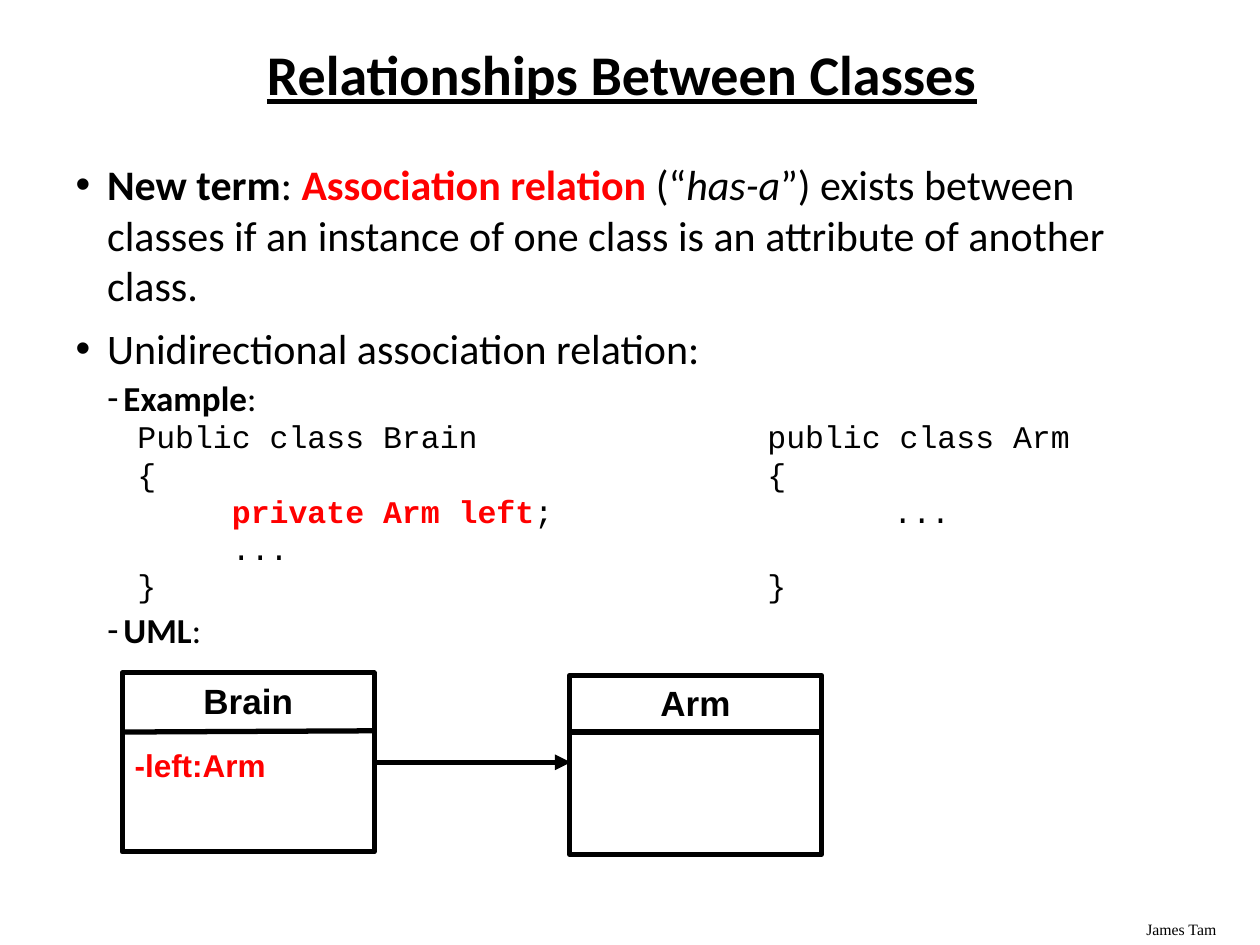
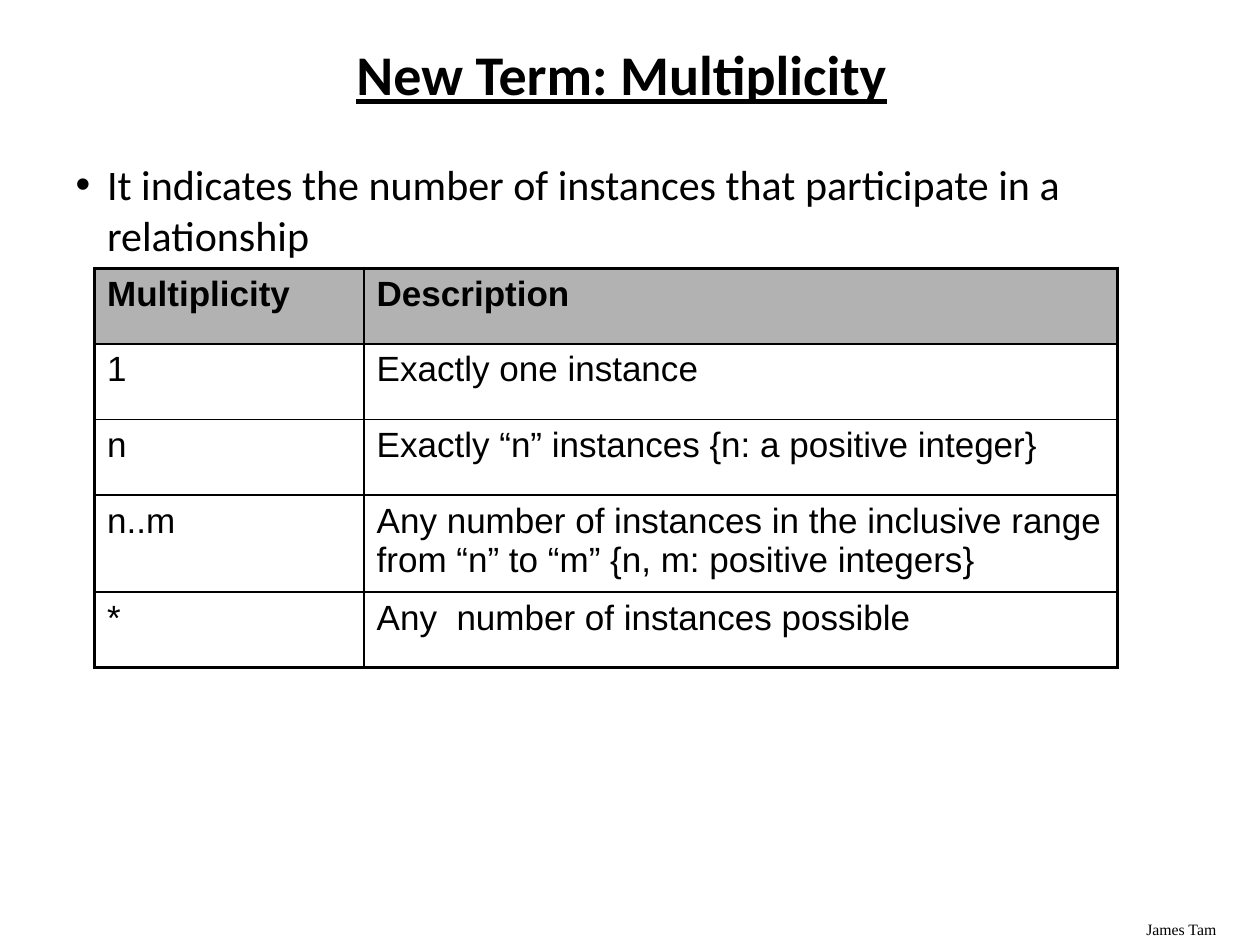
from lxml.etree import SubElement
from pptx import Presentation
from pptx.dml.color import RGBColor
from pptx.enum.shapes import MSO_CONNECTOR, MSO_SHAPE
from pptx.enum.text import MSO_ANCHOR, MSO_AUTO_SIZE, PP_ALIGN
from pptx.oxml.ns import qn
from pptx.util import Inches, Pt

BLACK = RGBColor(0x00, 0x00, 0x00)
RED = RGBColor(0xFF, 0x00, 0x00)
GRAY = RGBColor(0xB2, 0xB2, 0xB2)

FOOTER = "James Tam"
TITLE_BOX = (0.47, 0.33, 8.93, 0.57)
BODY_BOX = (0.5, 1.21, 8.94, 5.87)

BOLD = {"bold": True}
RED_BOLD = {"bold": True, "color": RED}

LEVELS = {
    "point": dict(level=0, margin=0.25, indent=-0.25, bullet="•", size=24, font="Calibri", before=7.2, spacing=1.0),
    "detail": dict(level=1, margin=0.38, indent=-0.13, bullet="-", size=20, font="Calibri", before=2, spacing=1.0),
    "code": dict(level=2, margin=0.49, indent=0, bullet=None, size=18, font="Courier New", before=1.8, spacing=0.9),
}
LEVELS["statement"] = {**LEVELS["code"], "indent": 0.75}

ASSOCIATION_TITLE = "Relationships Between Classes"
ASSOCIATION_BODY = [
    ("point", [
        ("New term", BOLD), (": ", {}), ("Association relation ", RED_BOLD),
        ("(“", {}), ("has-a", {"italic": True}),
        ("”) exists between classes if an instance of one class is an attribute of another class.", {}),
    ]),
    ("point", [("Unidirectional association relation:", {})]),
    ("detail", [("Example", BOLD), (":", {})]),
    ("code", [("Public class Brain\t\t\tpublic class Arm", {})]),
    ("code", [("{\t\t\t\t\t{", {})]),
    ("statement", [("private Arm left", RED_BOLD), (";\t\t\t...", {})]),
    ("statement", [("...", {})]),
    ("code", [("}\t\t\t\t\t}", {})]),
    ("detail", [("UML", BOLD), (":", {})]),
]
CLASS_SIZE = (2, 1.42)
CLASSES = [("Brain", 0.97, 5.34), ("Arm", 4.52, 5.36)]
DIVIDERS = [((0.97, 5.81), (2.96, 5.8)), ((4.52, 5.81), (6.5, 5.81))]
ASSOCIATION_ARROW = ((2.96, 6.05), (4.53, 6.05))
ATTRIBUTE = "-left:Arm"
ATTRIBUTE_BOX = (0.97, 5.87, 1.64, 0.4)

MULTIPLICITY_TITLE = "New Term: Multiplicity"
MULTIPLICITY_BODY = [
    ("point", [("It indicates the number of instances that participate in a relationship", {})]),
]
MULTIPLICITIES = [
    ("Multiplicity", "Description"),
    ("1", "Exactly one instance"),
    ("n", "Exactly “n” instances {n: a positive integer}"),
    ("n..m", "Any number of instances in the inclusive range from “n” to “m” {n, m: positive integers}"),
    ("*", "Any  number of instances possible"),
]
TABLE_BOX = (0.75, 2.13, 8.12, 3.17)
COLUMN_WIDTHS = [2.14, 5.98]
ROW_HEIGHTS = [0.6, 0.6, 0.6, 0.77, 0.6]
OUTER_BORDER, INNER_BORDER = 2.25, 1


def inches(values):
    """Convert a sequence of numbers to lengths."""
    return [Inches(value) for value in values]


def add_run(paragraph, text, size, font, color=BLACK, bold=False, italic=False, underline=False):
    """Append one formatted run."""
    run = paragraph.add_run()
    run.text = text
    run.font.size, run.font.name = Pt(size), font
    run.font.bold, run.font.italic, run.font.underline = bold, italic, underline
    run.font.color.rgb = color


def place(shape, box):
    """Move and size a shape."""
    shape.left, shape.top, shape.width, shape.height = inches(box)


def fill_title(shape, text):
    """Write the shared title style."""
    place(shape, TITLE_BOX)
    frame = shape.text_frame
    frame.vertical_anchor, frame.auto_size = MSO_ANCHOR.MIDDLE, MSO_AUTO_SIZE.NONE
    paragraph = frame.paragraphs[0]
    paragraph.alignment, paragraph.line_spacing = PP_ALIGN.CENTER, 0.9
    add_run(paragraph, text, 32, "Calibri", bold=True, underline=True)


def format_level(paragraph, style):
    """Apply level, spacing, indent, tabs and bullet."""
    paragraph.level = style["level"]
    paragraph.space_before, paragraph.space_after = Pt(style["before"]), Pt(0)
    paragraph.line_spacing = style["spacing"]
    properties = paragraph._p.get_or_add_pPr()
    properties.set("marL", str(Inches(style["margin"])))
    properties.set("indent", str(Inches(style["indent"])))
    properties.set("defTabSz", str(Inches(1)))
    if style["bullet"]:
        SubElement(properties, qn("a:buChar"), char=style["bullet"])
    else:
        SubElement(properties, qn("a:buNone"))


def fill_body(shape, content):
    """Write the list, paragraph by paragraph."""
    place(shape, BODY_BOX)
    frame = shape.text_frame
    frame.auto_size = MSO_AUTO_SIZE.NONE
    for index, (level, runs) in enumerate(content):
        paragraph = frame.add_paragraph() if index else frame.paragraphs[0]
        style = LEVELS[level]
        format_level(paragraph, style)
        for text, emphasis in runs:
            add_run(paragraph, text, style["size"], style["font"], **emphasis)


def add_label(slide, box, text, size, font, **emphasis):
    """Add a one-line text box."""
    frame = slide.shapes.add_textbox(*inches(box)).text_frame
    frame.word_wrap = True
    add_run(frame.paragraphs[0], text, size, font, **emphasis)


def add_content_slide(presentation, title, body):
    """Add a slide with title, list and footer."""
    slide = presentation.slides.add_slide(presentation.slide_layouts[1])
    fill_title(slide.shapes.title, title)
    fill_body(slide.placeholders[1], body)
    add_label(slide, (9, 7.25, 1, 0.25), FOOTER, 9, "Times New Roman")
    return slide


def add_line(slide, start, end, arrow=False):
    """Add a black line, with an arrowhead at its end if asked."""
    connector = slide.shapes.add_connector(MSO_CONNECTOR.STRAIGHT, *inches(start + end))
    connector.line.color.rgb, connector.line.width = BLACK, Pt(3)
    properties = connector._element.spPr
    if arrow:
        SubElement(properties.find(qn("a:ln")), qn("a:tailEnd"), type="triangle")
    SubElement(properties, qn("a:effectLst"))


def add_class_box(slide, name, left, top):
    """Add a class rectangle with its name at the top."""
    shape = slide.shapes.add_shape(MSO_SHAPE.RECTANGLE, *inches((left, top, *CLASS_SIZE)))
    shape.shadow.inherit = False
    shape.fill.background()
    shape.line.color.rgb, shape.line.width = BLACK, Pt(3)
    frame = shape.text_frame
    frame.vertical_anchor, frame.word_wrap = MSO_ANCHOR.TOP, False
    frame.paragraphs[0].alignment = PP_ALIGN.CENTER
    add_run(frame.paragraphs[0], name, 20, "Arial", bold=True)


def set_border(cell, side, width):
    """Draw one side of a table cell."""
    line = SubElement(cell._tc.get_or_add_tcPr(), qn(f"a:ln{side}"), w=str(Pt(width)))
    SubElement(SubElement(line, qn("a:solidFill")), qn("a:srgbClr"), val=str(BLACK))


def add_multiplicity_table(slide):
    """Add the table with a heavier outer border."""
    last_row, last_column = len(ROW_HEIGHTS) - 1, len(COLUMN_WIDTHS) - 1
    table = slide.shapes.add_table(last_row + 1, last_column + 1, *inches(TABLE_BOX)).table
    table.horz_banding = False
    for column, width in zip(table.columns, COLUMN_WIDTHS):
        column.width = Inches(width)
    for row, height in zip(table.rows, ROW_HEIGHTS):
        row.height = Inches(height)
    for row_index, texts in enumerate(MULTIPLICITIES):
        for column_index, text in enumerate(texts):
            cell = table.cell(row_index, column_index)
            outer_sides = {
                "L": column_index == 0, "R": column_index == last_column,
                "T": row_index == 0, "B": row_index == last_row,
            }
            for side, outer in outer_sides.items():
                set_border(cell, side, OUTER_BORDER if outer else INNER_BORDER)
            header = row_index == 0
            if header:
                cell.fill.solid()
                cell.fill.fore_color.rgb = GRAY
            else:
                cell.fill.background()
            paragraph = cell.text_frame.paragraphs[0]
            paragraph.space_before = Pt(6)
            add_run(paragraph, text, 20, "Arial", bold=header)


def main():
    """Build and save both slides."""
    presentation = Presentation()
    presentation.slide_width, presentation.slide_height = Inches(10), Inches(7.5)

    slide = add_content_slide(presentation, ASSOCIATION_TITLE, ASSOCIATION_BODY)
    for name, left, top in CLASSES:
        add_class_box(slide, name, left, top)
    for start, end in DIVIDERS:
        add_line(slide, start, end)
    add_label(slide, ATTRIBUTE_BOX, ATTRIBUTE, 18, "Arial", **RED_BOLD)
    add_line(slide, *ASSOCIATION_ARROW, arrow=True)

    slide = add_content_slide(presentation, MULTIPLICITY_TITLE, MULTIPLICITY_BODY)
    add_multiplicity_table(slide)

    presentation.save("out.pptx")


if __name__ == "__main__":
    main()
